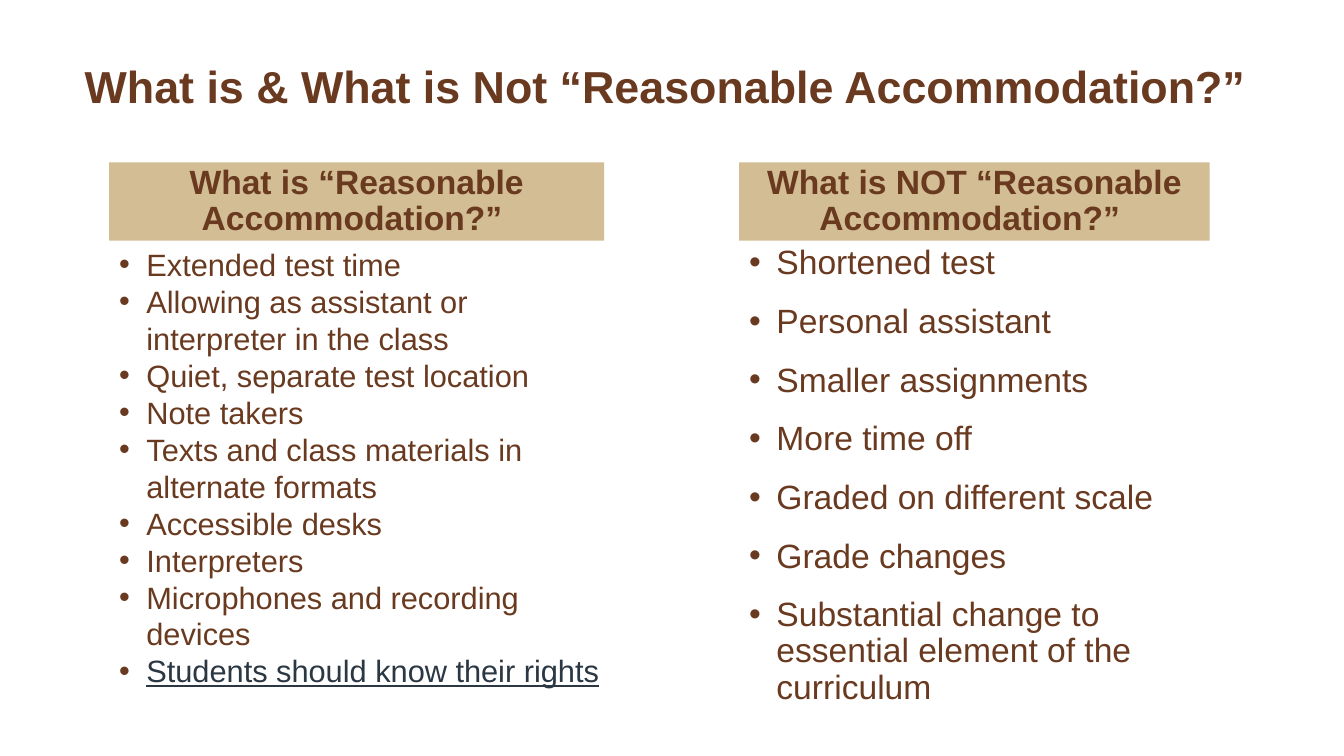
from lxml.etree import SubElement
from pptx import Presentation
from pptx.dml.color import RGBColor
from pptx.enum.shapes import MSO_SHAPE
from pptx.enum.text import MSO_ANCHOR, PP_ALIGN
from pptx.oxml.ns import qn
from pptx.util import Pt

TITLE = "What is & What is Not “Reasonable Accommodation?” "
COLUMNS = [
    {
        "heading": "What is “Reasonable Accommodation?” ",
        "items": [
            "Extended test time",
            "Allowing as assistant or interpreter in the class",
            "Quiet, separate test location",
            "Note takers",
            "Texts and class materials in alternate formats",
            "Accessible desks",
            "Interpreters",
            "Microphones and recording devices",
            "Students should know their rights",
        ],
        "underlined": "Students should know their rights",
        "left": 78, "heading_width": 353.5, "list_width": 366, "list_height": 338,
        "size": 22, "line_spacing": 1.0, "space_before": 0,
    },
    {
        "heading": "What is NOT “Reasonable Accommodation?” ",
        "items": [
            "Shortened test",
            "Personal assistant",
            "Smaller assignments",
            "More time off",
            "Graded on different scale",
            "Grade changes",
            "Substantial change to essential element of the curriculum",
        ],
        "underlined": None,
        "left": 528, "heading_width": 336, "list_width": 336, "list_height": 344,
        "size": 24, "line_spacing": 0.9, "space_before": 16,
    },
]

BROWN = RGBColor(0x6A, 0x3A, 0x20)
TAN = RGBColor(0xD2, 0xBD, 0x94)
SLATE = RGBColor(0x2B, 0x37, 0x42)
FONT = "Arial"
HEADING_TOP, HEADING_HEIGHT = 116, 56
BULLET_INDENT = 19.5


def style(paragraph, size, color=BROWN, bold=False):
    font = paragraph.font
    font.name, font.size, font.bold = FONT, Pt(size), bold
    font.color.rgb = color


def add_bullet(paragraph):
    properties = paragraph._p.get_or_add_pPr()
    properties.set("marL", str(Pt(BULLET_INDENT)))
    properties.set("indent", str(-Pt(BULLET_INDENT)))
    bullet_color = SubElement(properties, qn("a:buClr"))
    SubElement(bullet_color, qn("a:srgbClr"), val=str(BROWN))
    SubElement(properties, qn("a:buFont"), typeface=FONT)
    SubElement(properties, qn("a:buChar"), char="•")


def add_title(slide):
    box = slide.shapes.add_textbox(Pt(24), Pt(24), Pt(912), Pt(60))
    frame = box.text_frame
    frame.word_wrap = True
    frame.vertical_anchor = MSO_ANCHOR.BOTTOM
    paragraph = frame.paragraphs[0]
    paragraph.text = TITLE
    paragraph.alignment = PP_ALIGN.CENTER
    style(paragraph, 32, bold=True)


def add_heading(slide, column):
    shape = slide.shapes.add_shape(
        MSO_SHAPE.RECTANGLE, Pt(column["left"]), Pt(HEADING_TOP),
        Pt(column["heading_width"]), Pt(HEADING_HEIGHT))
    shape.shadow.inherit = False
    shape.fill.solid()
    shape.fill.fore_color.rgb = TAN
    shape.line.fill.background()
    frame = shape.text_frame
    frame.word_wrap = True
    frame.vertical_anchor = MSO_ANCHOR.MIDDLE
    paragraph = frame.paragraphs[0]
    paragraph.text = column["heading"]
    paragraph.alignment = PP_ALIGN.CENTER
    paragraph.line_spacing = 0.9
    style(paragraph, 24, bold=True)


def add_list(slide, column):
    box = slide.shapes.add_textbox(
        Pt(column["left"]), Pt(HEADING_TOP + HEADING_HEIGHT),
        Pt(column["list_width"]), Pt(column["list_height"]))
    frame = box.text_frame
    frame.word_wrap = True
    for index, item in enumerate(column["items"]):
        paragraph = frame.add_paragraph() if index else frame.paragraphs[0]
        paragraph.text = item
        paragraph.line_spacing = column["line_spacing"]
        if index:
            paragraph.space_before = Pt(column["space_before"])
        add_bullet(paragraph)
        underlined = item == column["underlined"]
        style(paragraph, column["size"], SLATE if underlined else BROWN)
        paragraph.font.underline = underlined


def main():
    presentation = Presentation()
    presentation.slide_width, presentation.slide_height = Pt(960), Pt(540)
    slide = presentation.slides.add_slide(presentation.slide_layouts[6])
    add_title(slide)
    for column in COLUMNS:
        add_heading(slide, column)
        add_list(slide, column)
    presentation.save("out.pptx")


if __name__ == "__main__":
    main()
